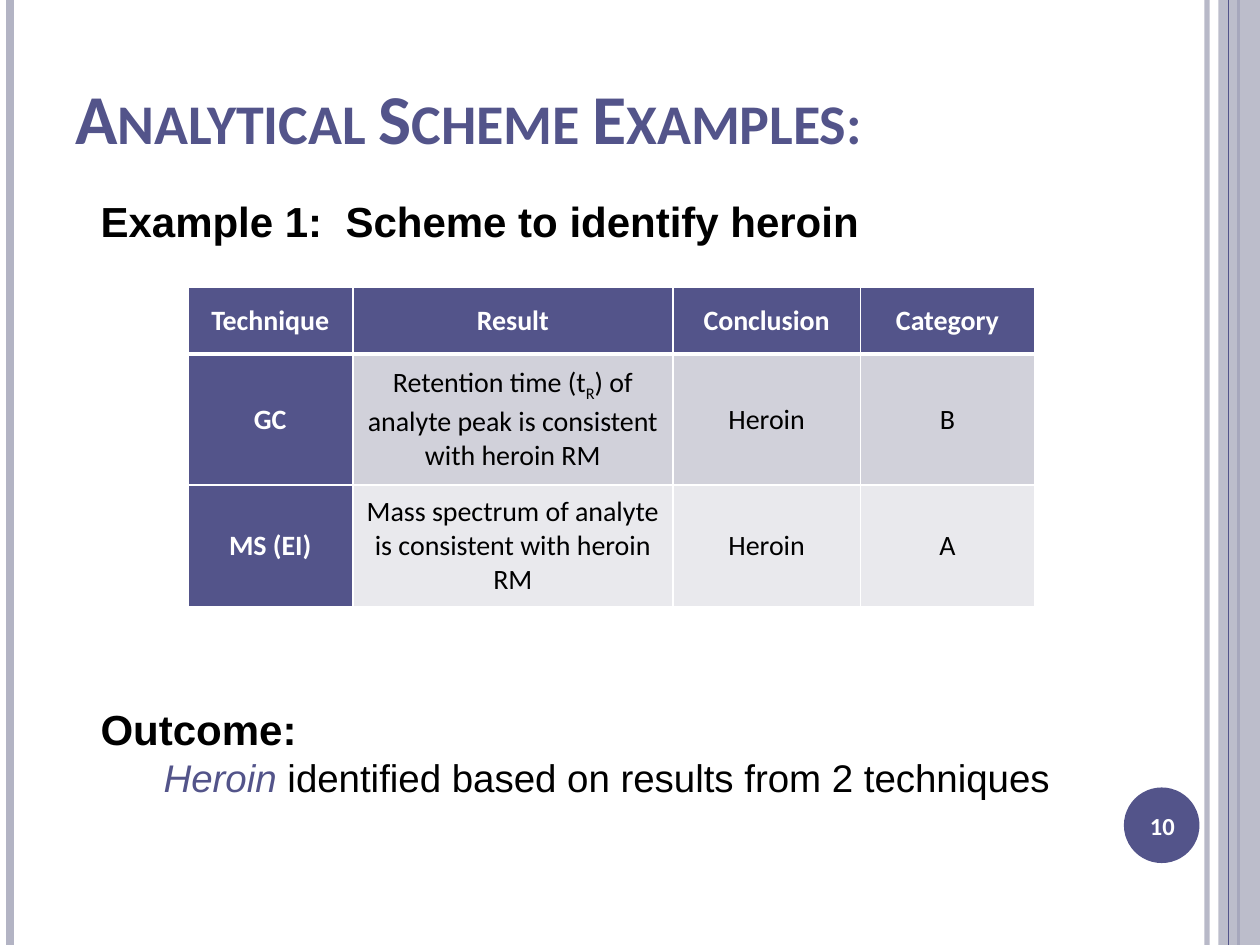
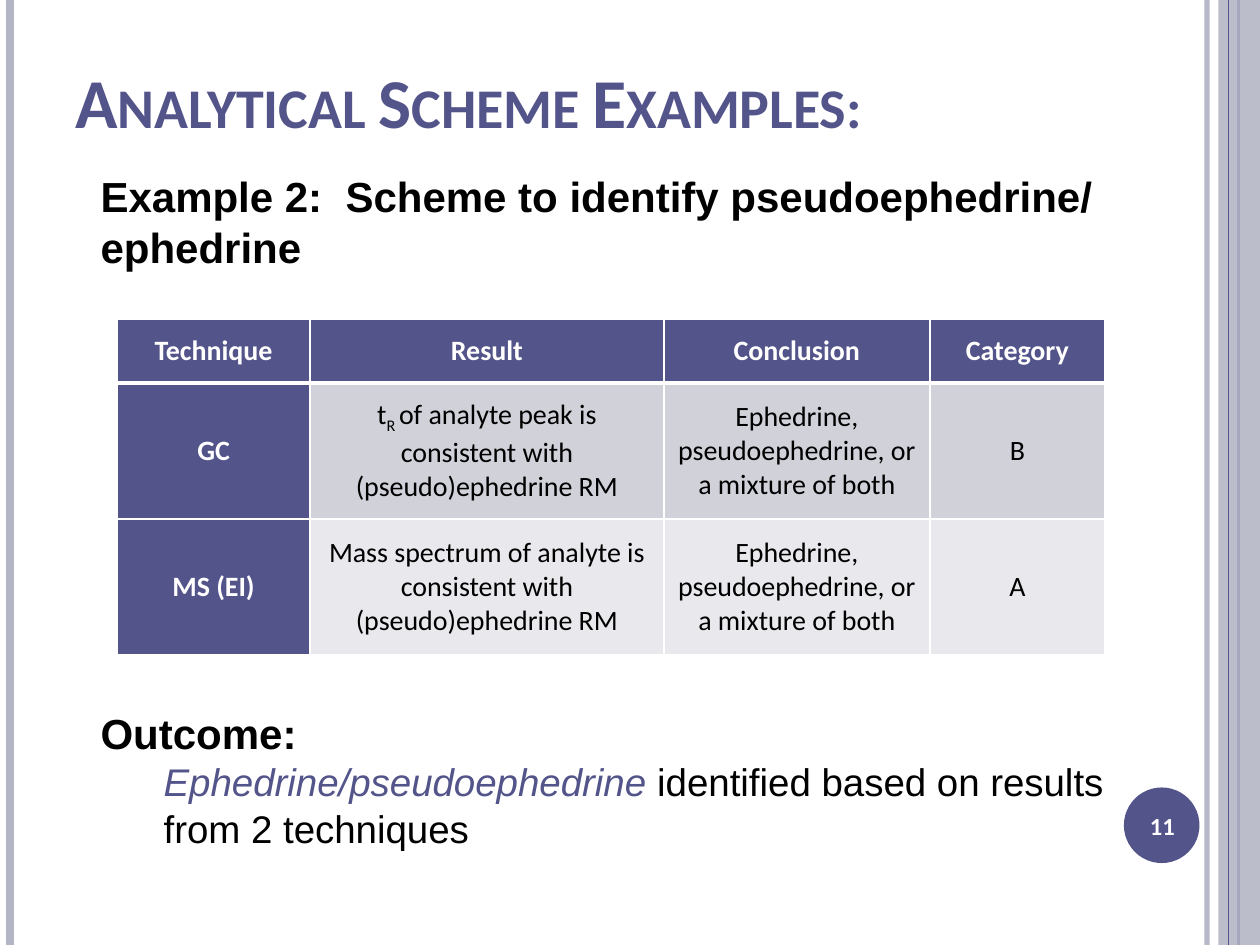
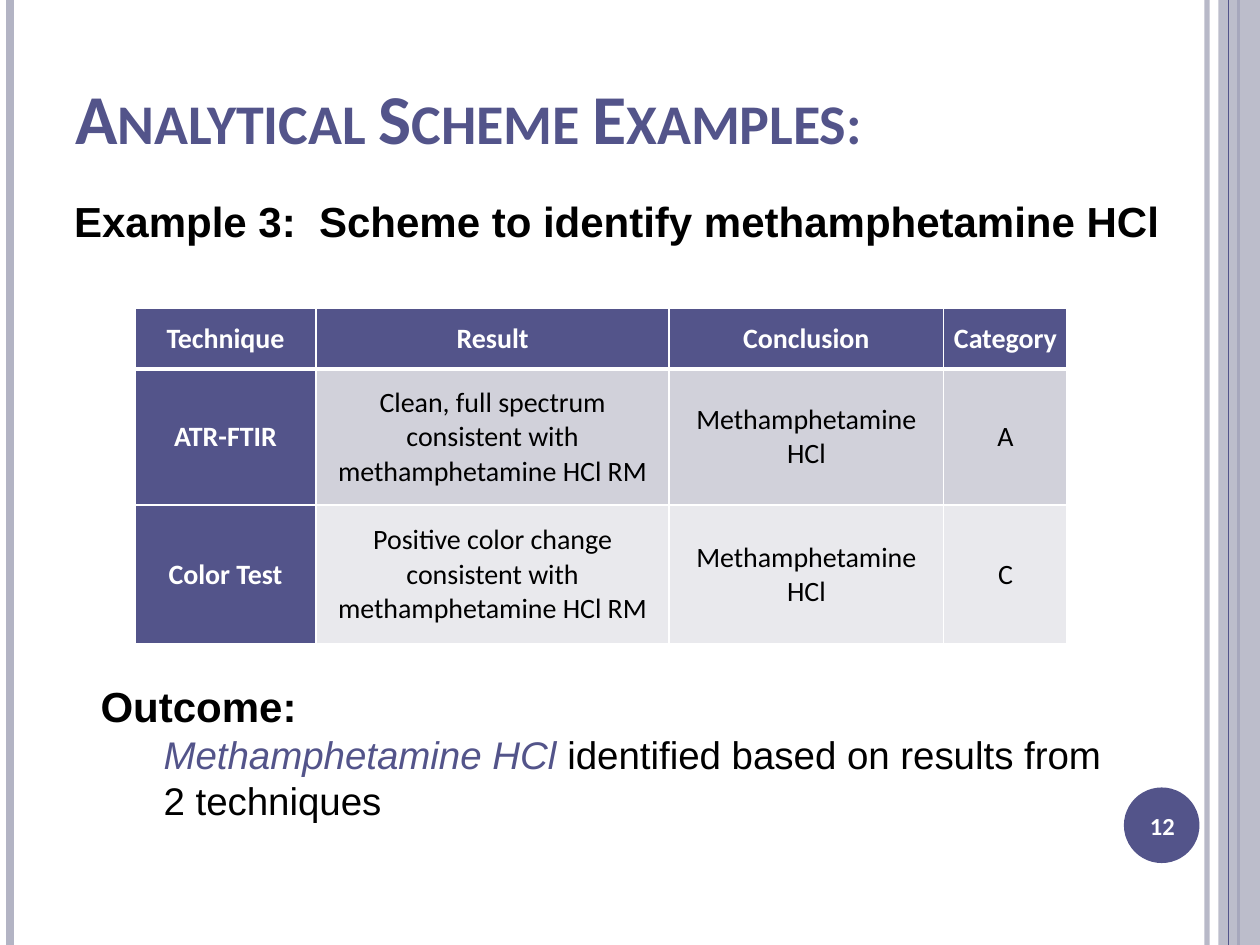
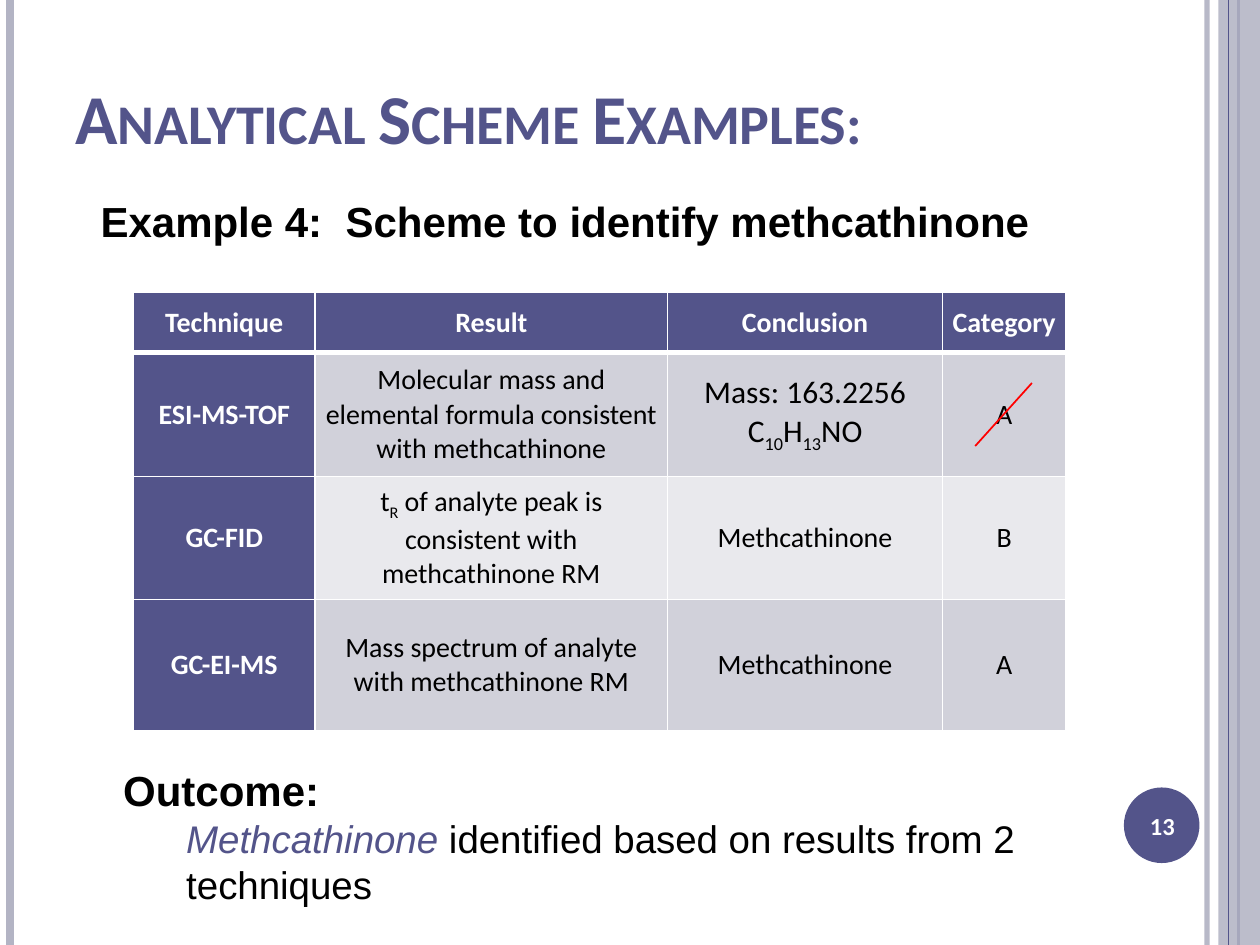
from dataclasses import dataclass, field

from pptx import Presentation
from pptx import util as u
from pptx.dml.color import RGBColor
from pptx.enum import shapes, text
from pptx.oxml.ns import qn
from lxml import etree

COLORS = {
    "accent": "53548A",
    "rail": "B3B4C4",
    "band_dark": "D1D1DA",
    "band_light": "E9E9ED",
    "white": "FFFFFF",
    "black": "000000",
    "strike": "FF0000",
}
HEADING_FONT, BODY_FONT = "Calibri", "Arial"
COLUMNS, ROWS = 100, 75  # square grid over the whole slide
UNIT = u.Inches(0.1)
FIRST_NUMBER = 10
TITLE = "Analytical Scheme Examples:"
HEADER = ("Technique", "Result", "Conclusion", "Category")
OUTCOME_TAIL = "identified based on results from 2 techniques"


@dataclass(frozen=True)
class Box:
    """A rectangle in grid columns and rows."""
    left: float
    top: float
    width: float
    height: float

    def emu(self) -> tuple:
        return tuple(map(grid, (self.left, self.top, self.width, self.height)))


@dataclass(frozen=True)
class Rule:
    """A straight line between two grid points."""
    start: tuple
    end: tuple
    color: str
    weight: float
    opacity: int = 100


@dataclass(frozen=True)
class Example:
    heading: str
    heading_box: Box
    table_corner: tuple
    column_widths: tuple
    row_heights: tuple
    findings: tuple  # text between ~ marks is subscript
    substance: str
    outcome_box: Box
    title_height: float = 12.5
    cell_sizes: dict = field(default_factory=dict)
    strikes: tuple = ()


def rail(column: float, color: str, weight: float, opacity: int = 100) -> Rule:
    return Rule((column, 0), (column, ROWS), color, weight, opacity)


RAILS_BELOW = (rail(95.8, "rail", 3, 93), rail(0.8, "rail", 4.5), rail(98.3, "accent", 1.5))
RAIL_ABOVE = rail(97.5, "accent", 0.75)
SIDE_BAND = Box(96.7, 0, 3.3, ROWS)
BADGE = Box(89.2, 62.5, 6, 6)
NUMBER_BOX = Box(88.9, 62.7, 6.7, 5.7)

EXAMPLES = (
    Example(
        "Example 1:  Scheme to identify heroin", Box(7, 15, 85, 5),
        (14.9, 22.8), (13.1, 25.4, 14.9, 13.8), (5.3, 10.4, 9.7),
        (("GC", "Retention time (t~R~) of analyte peak is consistent with heroin RM",
          "Heroin", "B"),
         ("MS (EI)", "Mass spectrum of analyte is consistent with heroin RM",
          "Heroin", "A")),
        "Heroin", Box(7, 55.3, 83.1, 8.8),
    ),
    Example(
        "Example 2:  Scheme to identify pseudoephedrine/ ephedrine", Box(7, 13, 85, 9.1),
        (9.3, 25.3), (15.3, 28.1, 21.1, 13.9), (5.1, 10.8, 10.8),
        (("GC", "t~R ~of analyte peak is consistent with (pseudo)ephedrine RM",
          "Ephedrine, pseudoephedrine, or a mixture of both", "B"),
         ("MS (EI)", "Mass spectrum of analyte is consistent with (pseudo)ephedrine RM",
          "Ephedrine, pseudoephedrine, or a mixture of both", "A")),
        "Ephedrine/pseudoephedrine", Box(7, 55.6, 83.1, 12.5),
        title_height=10,
    ),
    Example(
        "Example 3:  Scheme to identify methamphetamine HCl", Box(4.9, 15, 89.3, 5),
        (10.7, 24.5), (14.4, 28, 21.8, 9.8), (4.8, 10.8, 11),
        (("ATR-FTIR", "Clean, full spectrum consistent with methamphetamine HCl RM",
          "Methamphetamine HCl", "A"),
         ("Color Test", "Positive color change consistent with methamphetamine HCl RM",
          "Methamphetamine HCl", "C")),
        "Methamphetamine HCl", Box(7, 53.4, 83.1, 12.5),
    ),
    Example(
        "Example 4:  Scheme to identify methcathinone", Box(7, 15, 85, 5),
        (10.6, 23.2), (14.4, 28, 21.8, 9.8), (4.8, 9.8, 9.8, 10.4),
        (("ESI-MS-TOF", "Molecular mass and elemental formula consistent with methcathinone",
          "Mass: 163.2256\nC~10~H~13~NO", "A"),
         ("GC-FID", "t~R~ of analyte peak is consistent with methcathinone RM",
          "Methcathinone", "B"),
         ("GC-EI-MS", "Mass spectrum of analyte with methcathinone RM",
          "Methcathinone", "A")),
        "Methcathinone", Box(8.8, 60.1, 75.4, 12.5),
        cell_sizes={(1, 2): 18},
        strikes=(Rule((77.4, 35.4), (81.9, 30.4), "strike", 1),),
    ),
)


def grid(count: float) -> u.Emu:
    return u.Emu(round(count * UNIT))


def rgb(name: str) -> RGBColor:
    return RGBColor.from_string(COLORS[name])


def style(span, size: float, color: str, font: str, bold: bool = False, italic: bool = False) -> None:
    span.font.size, span.font.name = u.Pt(size), font
    span.font.bold, span.font.italic = bold, italic
    span.font.color.rgb = rgb(color)


def set_opacity(element, percent: int) -> None:
    if percent < 100:
        color = next(element.iter(qn("a:srgbClr")))
        etree.SubElement(color, qn("a:alpha")).set("val", str(percent * 1000))


def add_rule(page, rule: Rule):
    line = page.shapes.add_connector(
        shapes.MSO_CONNECTOR.STRAIGHT, *map(grid, rule.start + rule.end))
    line.line.color.rgb = rgb(rule.color)
    line.line.width = u.Pt(rule.weight)
    properties = line.element.spPr
    set_opacity(properties, rule.opacity)
    etree.SubElement(properties, qn("a:effectLst"))
    return line


def add_solid(page, kind, box: Box, color: str, opacity: int = 100):
    shape = page.shapes.add_shape(kind, *box.emu())
    shape.shadow.inherit = False
    shape.fill.solid()
    shape.fill.fore_color.rgb = rgb(color)
    shape.line.fill.background()
    set_opacity(shape.element.spPr, opacity)
    return shape


def decorate(layout, page) -> None:
    """Draw the frame on a page, then hand it to the layout all pages share."""
    frame = [add_rule(page, rule) for rule in RAILS_BELOW]
    frame.append(add_solid(page, shapes.MSO_SHAPE.RECTANGLE, SIDE_BAND, "rail", 87))
    frame.append(add_rule(page, RAIL_ABOVE))
    frame.append(add_solid(page, shapes.MSO_SHAPE.OVAL, BADGE, "accent"))
    for shape in frame:
        layout.shapes.element.append(shape.element)


def add_title(page, height: float) -> None:
    title = page.shapes.title
    title.left, title.top, title.width, title.height = Box(5, 3, 81.7, height).emu()
    frame = title.text_frame
    frame.text = TITLE
    frame.auto_size = text.MSO_AUTO_SIZE.NONE
    frame.vertical_anchor = text.MSO_ANCHOR.MIDDLE
    para = frame.paragraphs[0]
    para.alignment = text.PP_ALIGN.LEFT
    style(para.runs[0], 40, "accent", HEADING_FONT, bold=True)
    para.runs[0].font._element.set("cap", "small")


def add_text(page, box: Box, words: str, size: float, color: str, font: str, grow: bool = True):
    """Add a text box whose first paragraph is bold."""
    frame = page.shapes.add_textbox(*box.emu()).text_frame
    frame.word_wrap = True
    frame.vertical_anchor = text.MSO_ANCHOR.MIDDLE
    frame.auto_size = (text.MSO_AUTO_SIZE.SHAPE_TO_FIT_TEXT if grow
                       else text.MSO_AUTO_SIZE.NONE)
    frame.text = words
    style(frame.paragraphs[0].runs[0], size, color, font, bold=True)
    return frame


def add_outcome(page, box: Box, substance: str) -> None:
    frame = add_text(page, box, "Outcome:", 24, "black", BODY_FONT)
    para = frame.add_paragraph()
    para._p.get_or_add_pPr().set("marL", str(grid(5)))
    for words, color, italic in ((substance + " ", "accent", True),
                                 (OUTCOME_TAIL, "black", False)):
        span = para.add_run()
        span.text = words
        style(span, 22, color, BODY_FONT, italic=italic)


def set_borders(cell, top: float, bottom: float) -> None:
    properties = cell._tc.get_or_add_tcPr()
    for side, weight in (("L", 1), ("R", 1), ("T", top), ("B", bottom)):
        line = etree.SubElement(properties, qn(f"a:ln{side}"), w=str(u.Pt(weight)))
        fill = etree.SubElement(line, qn("a:solidFill"))
        etree.SubElement(fill, qn("a:srgbClr"), val=COLORS["white"])


def fill_cell(cell, words: str, fill: str, size: float, strong: bool) -> None:
    cell.fill.solid()
    cell.fill.fore_color.rgb = rgb(fill)
    cell.vertical_anchor = text.MSO_ANCHOR.MIDDLE
    cell.margin_left = cell.margin_right = grid(0.7)
    cell.margin_top = cell.margin_bottom = 0
    frame = cell.text_frame
    for index, line in enumerate(words.split("\n")):
        para = frame.add_paragraph() if index else frame.paragraphs[0]
        para.alignment = text.PP_ALIGN.CENTER
        for part, piece in enumerate(line.split("~")):
            span = para.add_run()
            span.text = piece
            style(span, size, "white" if strong else "black", HEADING_FONT, bold=strong)
            if part % 2:
                span.font._element.set("baseline", "-25000")


def add_findings(page, example: Example) -> None:
    box = Box(*example.table_corner, sum(example.column_widths), sum(example.row_heights))
    rows = (HEADER,) + example.findings
    table = page.shapes.add_table(len(rows), len(HEADER), *box.emu()).table
    for column, width in zip(table.columns, example.column_widths):
        column.width = grid(width)
    for r, (row, height) in enumerate(zip(rows, example.row_heights)):
        table.rows[r].height = grid(height)
        band = "band_dark" if r % 2 else "band_light"
        for c, words in enumerate(row):
            strong = r == 0 or c == 0
            cell = table.cell(r, c)
            set_borders(cell, top=3 if r == 1 else 1, bottom=3 if r == 0 else 1)
            fill_cell(cell, words, "accent" if strong else band,
                      example.cell_sizes.get((r, c), 16), strong)


def build_page(page, example: Example, number: int) -> None:
    add_title(page, example.title_height)
    add_findings(page, example)
    badge = add_text(page, NUMBER_BOX, str(number), 14, "white", HEADING_FONT, grow=False)
    badge.paragraphs[0].alignment = text.PP_ALIGN.CENTER
    add_text(page, example.heading_box, example.heading, 24, "black", BODY_FONT)
    add_outcome(page, example.outcome_box, example.substance)
    for strike in example.strikes:
        add_rule(page, strike)


def main() -> None:
    deck = Presentation()
    deck.slide_width, deck.slide_height = grid(COLUMNS), grid(ROWS)
    layout = deck.slide_layouts.get_by_name("Title Only")
    for number, example in enumerate(EXAMPLES, FIRST_NUMBER):
        page = deck.slides.add_slide(layout)
        if number == FIRST_NUMBER:
            decorate(layout, page)
        build_page(page, example, number)
    deck.save("out.pptx")


if __name__ == "__main__":
    main()
